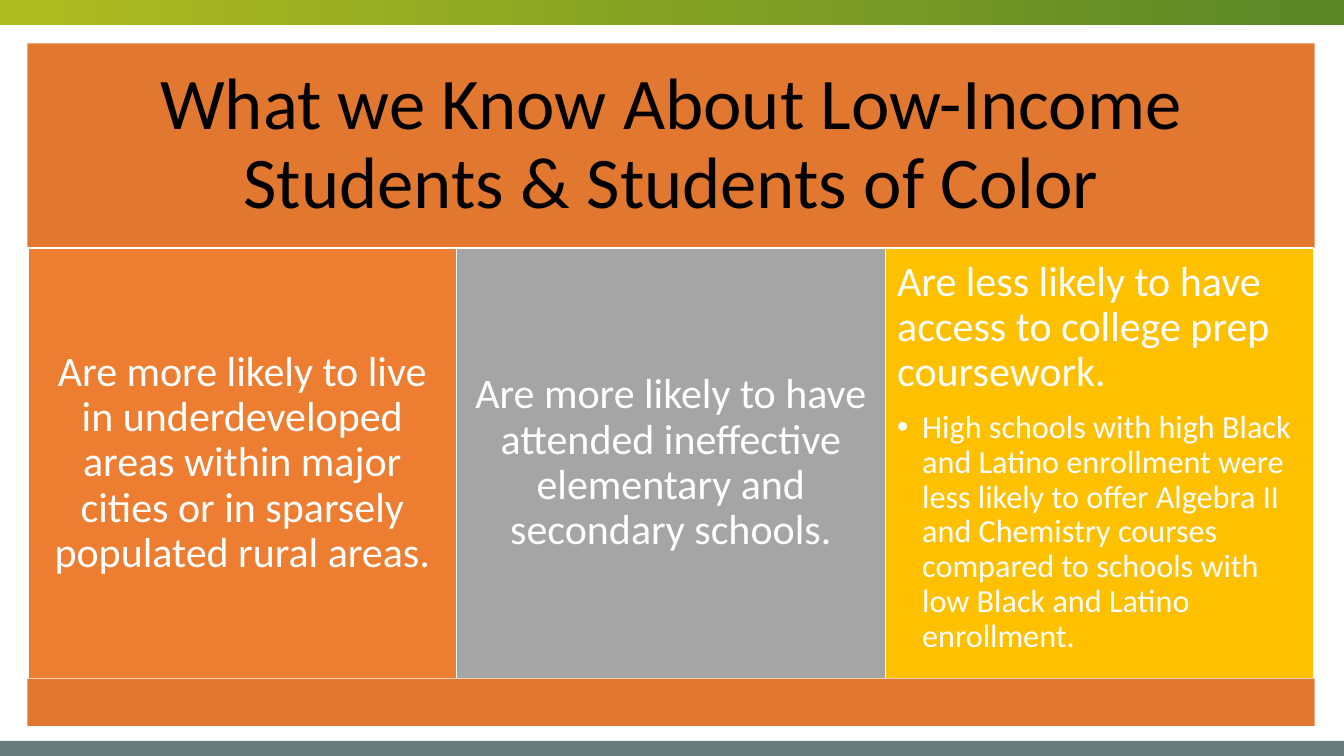
from dataclasses import dataclass

from lxml.etree import SubElement
from pptx import Presentation
from pptx.dml.color import RGBColor
from pptx.enum.shapes import MSO_SHAPE
from pptx.enum.text import MSO_ANCHOR, MSO_AUTO_SIZE, PP_ALIGN
from pptx.oxml.ns import qn
from pptx.util import Cm, Pt

COLORS = {
    "lime": "AFBC21",
    "green": "5B8727",
    "slate": "667B7A",
    "rust": "E2772F",
    "orange": "ED7D31",
    "gray": "A5A5A5",
    "gold": "FFC000",
    "white": "FFFFFF",
    "black": "000000",
}
FONT = "Calibri"
WIDTH, HEIGHT = 33.87, 19.05


@dataclass
class Box:
    left: float
    top: float
    width: float
    height: float
    color: str


@dataclass
class Card:
    text: str
    color: str


CARDS = [
    Card("Are more likely to live in underdeveloped areas within major cities "
         "or in sparsely populated rural areas.", "orange"),
    Card("Are more likely to have attended ineffective elementary and "
         "secondary schools.", "gray"),
    Card("Are less likely to have access to college prep coursework.", "gold"),
]
DETAIL = ("High schools with high Black and Latino enrollment were less likely "
          "to offer Algebra II and Chemistry courses compared to schools with "
          "low Black and Latino enrollment.")
CARD_LEFT, CARD_TOP, CARD_WIDTH, CARD_HEIGHT = 0.71, 6.25, 10.8, 10.85

TOP = Box(0, 0, WIDTH, 0.64, "lime")
FOOT = Box(0, 18.67, WIDTH, 0.38, "slate")
HEAD = Box(0.69, 1.09, 32.44, 5.16, "rust")
BASE = Box(0.69, 17.1, 32.44, 1.19, "rust")


def rgb(name: str) -> RGBColor:
    return RGBColor.from_string(COLORS[name])


def place(shape, box: Box) -> None:
    shape.left, shape.top = Cm(box.left), Cm(box.top)
    shape.width, shape.height = Cm(box.width), Cm(box.height)
    shape.fill.solid()
    shape.fill.fore_color.rgb = rgb(box.color)


def add_box(slide, box: Box):
    shape = slide.shapes.add_shape(MSO_SHAPE.RECTANGLE, 0, 0, 0, 0)
    place(shape, box)
    shape.line.fill.background()
    shape.shadow.inherit = False
    return shape


def outline(shape) -> None:
    shape.line.color.rgb = rgb("white")
    shape.line.width = Pt(1)


def set_frame(frame, inset: float, anchor: MSO_ANCHOR) -> None:
    frame.word_wrap = True
    frame.auto_size = MSO_AUTO_SIZE.NONE
    frame.vertical_anchor = anchor
    frame.margin_left = frame.margin_right = Cm(inset)
    frame.margin_top = frame.margin_bottom = Cm(inset)


def style(para, size: float, color: str, align: PP_ALIGN) -> None:
    para.alignment = align
    para.line_spacing = 0.9
    para.space_before = Pt(0)
    for run in para.runs:
        run.font.name = FONT
        run.font.size = Pt(size)
        run.font.color.rgb = rgb(color)


def set_bullet(para, indent: float, char: str = "") -> None:
    """Hang the text by indent in cm, with no bullet if char is empty."""
    props = para._p.get_or_add_pPr()
    props.set("marL", str(Cm(indent)))
    props.set("indent", str(-Cm(indent)))
    if char:
        SubElement(props, qn("a:buFont")).set("typeface", "Arial")
        SubElement(props, qn("a:buChar")).set("char", char)
    else:
        SubElement(props, qn("a:buNone"))


def fill_list(frame, text: str) -> None:
    set_frame(frame, 0.3, MSO_ANCHOR.TOP)
    frame.text = text
    lead = frame.paragraphs[0]
    style(lead, 30, "white", PP_ALIGN.LEFT)
    lead.space_after = Pt(10.5)
    set_bullet(lead, 0)
    item = frame.add_paragraph()
    item.text = DETAIL
    item.level = 1
    style(item, 23, "white", PP_ALIGN.LEFT)
    set_bullet(item, 0.63, "•")


def main() -> None:
    deck = Presentation()
    deck.slide_width, deck.slide_height = Cm(WIDTH), Cm(HEIGHT)
    slide = deck.slides.add_slide(deck.slide_layouts[1])

    band = add_box(slide, TOP)
    band.fill.gradient()
    band.fill.gradient_angle = 0
    for stop, name, spot in zip(band.fill.gradient_stops, ("lime", "green"), (0, 1)):
        stop.color.rgb = rgb(name)
        stop.position = spot
    add_box(slide, FOOT)

    title = slide.shapes.title
    place(title, HEAD)
    set_frame(title.text_frame, 0.56, MSO_ANCHOR.MIDDLE)
    title.text_frame.text = "What we Know About Low-Income Students & Students of Color"
    style(title.text_frame.paragraphs[0], 52, "black", PP_ALIGN.CENTER)

    for i, card in enumerate(CARDS):
        box = Box(CARD_LEFT + i * CARD_WIDTH, CARD_TOP, CARD_WIDTH, CARD_HEIGHT, card.color)
        if card is CARDS[-1]:
            shape = slide.placeholders[1]
            place(shape, box)
            fill_list(shape.text_frame, card.text)
        else:
            shape = add_box(slide, box)
            set_frame(shape.text_frame, 0.3, MSO_ANCHOR.MIDDLE)
            shape.text_frame.text = card.text
            style(shape.text_frame.paragraphs[0], 30, "white", PP_ALIGN.CENTER)
        outline(shape)
    add_box(slide, BASE)

    deck.save("out.pptx")


if __name__ == "__main__":
    main()
